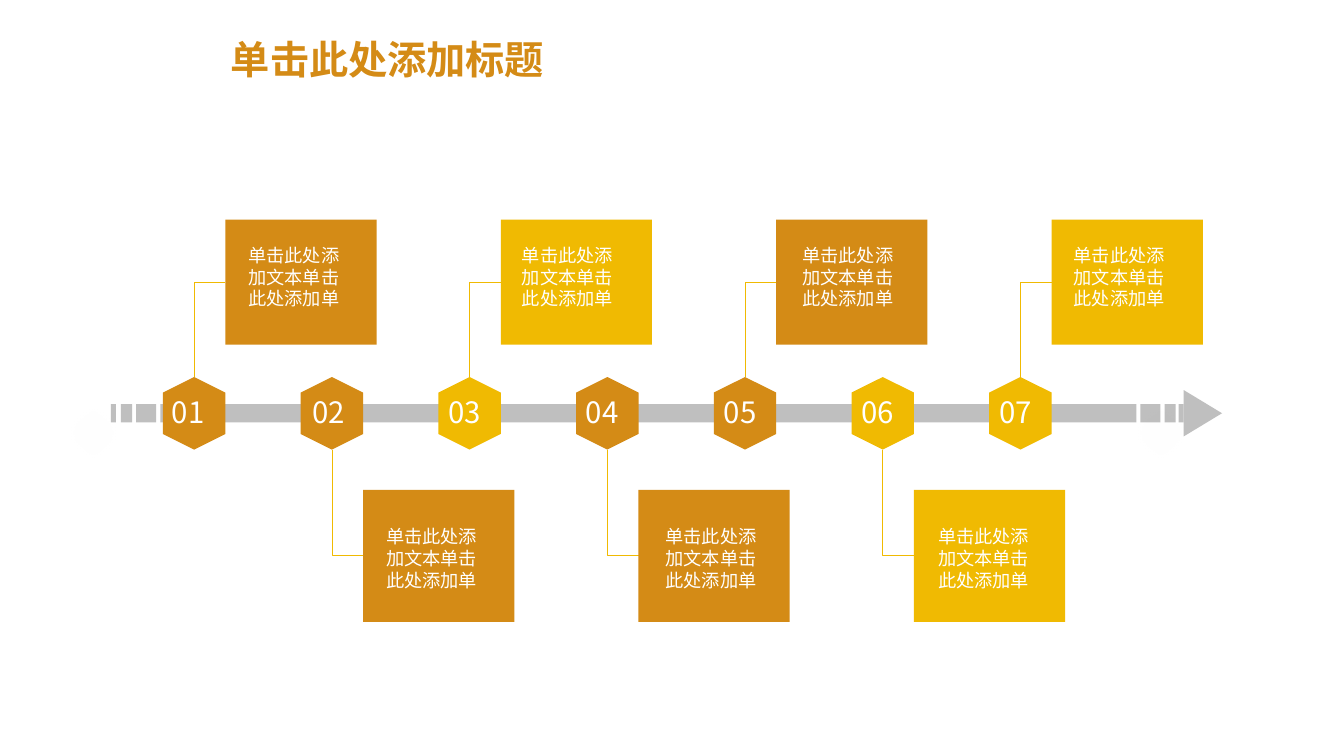
import pptx
import pptx.dml.color
import pptx.enum.shapes
import pptx.enum.text
import pptx.oxml.ns
import pptx.util
from lxml import etree

Inches = pptx.util.Inches
Pt = pptx.util.Pt
qn = pptx.oxml.ns.qn
PRESET = pptx.enum.shapes.MSO_SHAPE

COLORS = {"orange": "D48B16", "yellow": "F0BA02", "track": "BFBFBF",
          "white": "FFFFFF", "shadow": "000000"}
FONT = "Noto Sans CJK SC"
CARD_TEXT = "单击此处添加文本单击此处添加单"
FIRST_CENTER, STEP = 1.925, 1.366
HEX_LONG, HEX_SHORT = 0.72, 0.62
AXIS = 4.1
CARD_WIDTH = 1.5
ARM = 0.31
CARD_ROWS = {
    "above": {"top": 2.18, "height": 1.24, "text_top": 2.35, "elbow": 2.8},
    "below": {"top": 4.86, "height": 1.31, "text_top": 5.14, "elbow": 5.51},
}
STEPS = [
    ("orange", 0.32, 0.10),
    ("orange", 0.29, 0.10),
    ("yellow", 0.31, 0.08),
    ("orange", 0.31, 0.14),
    ("orange", 0.31, 0.13),
    ("yellow", 0.31, 0.11),
    ("yellow", 0.31, 0.09),
]
TRACK_PARTS = [
    (1.1, 0.05, True), (1.2, 0.11, False), (1.35, 0.2, False), (1.59, 9.68, False),
    (11.31, 0.2, False), (11.55, 0.11, False), (11.69, 0.05, True),
]


def rgb(name):
    return pptx.dml.color.RGBColor.from_string(COLORS[name])


def add_block(page, preset, left, top, width, height, color):
    block = page.shapes.add_shape(
        preset, Inches(left), Inches(top), Inches(width), Inches(height))
    block.shadow.inherit = False
    block.fill.solid()
    block.fill.fore_color.rgb = rgb(color)
    block.line.fill.background()
    return block


def style_paragraph(para, size, color, font):
    para.font.size = Pt(size)
    para.font.color.rgb = rgb(color)
    para.font.name = font
    defaults = para._p.pPr.find(qn("a:defRPr"))
    etree.SubElement(defaults, qn("a:ea")).set("typeface", font)


def add_label(page, left, top, width, height, text, size, inset_x, inset_y):
    box = page.shapes.add_textbox(
        Inches(left), Inches(top), Inches(width), Inches(height))
    frame = box.text_frame
    frame.word_wrap = True
    frame.margin_left = frame.margin_right = Inches(inset_x)
    frame.margin_top = frame.margin_bottom = Inches(inset_y)
    frame.text = text
    style_paragraph(frame.paragraphs[0], size, "white", FONT)


def add_soft_shadow(block):
    effects = block._element.spPr.find(qn("a:effectLst"))
    shadow = etree.SubElement(effects, qn("a:outerShdw"))
    shadow.set("blurRad", str(Pt(34)))
    shadow.set("dist", str(Pt(20)))
    shadow.set("dir", str(136 * 60000))
    tint = etree.SubElement(shadow, qn("a:srgbClr"))
    tint.set("val", COLORS["shadow"])
    etree.SubElement(tint, qn("a:alpha")).set("val", "10000")


def add_elbow(page, left, start, end):
    length = abs(end - start)
    middle_x, middle_y = left + ARM / 2, (start + end) / 2
    rising = end < start
    side = 1 if rising else -1
    elbow = page.shapes.add_connector(
        pptx.enum.shapes.MSO_CONNECTOR.ELBOW,
        Inches(middle_x + length / 2), Inches(middle_y + side * ARM / 2),
        Inches(middle_x - length / 2), Inches(middle_y - side * ARM / 2))
    properties = elbow._element.spPr
    properties.find(qn("a:xfrm")).set("rot", str((90 if rising else 270) * 60000))
    properties.find(qn("a:prstGeom")).set("prst", "bentConnector2")
    elbow.line.color.rgb = rgb("yellow")
    elbow.line.width = Pt(0.5)
    etree.SubElement(properties, qn("a:effectLst"))


def add_title(page, left, top, width, height):
    title = page.shapes.title
    title.left, title.top = Inches(left), Inches(top)
    title.width, title.height = Inches(width), Inches(height)
    frame = title.text_frame
    frame.text = "单击此处添加标题"
    frame.vertical_anchor = pptx.enum.text.MSO_ANCHOR.MIDDLE
    para = frame.paragraphs[0]
    para.alignment = pptx.enum.text.PP_ALIGN.LEFT
    para.line_spacing = 0.9
    para.font.bold = True
    style_paragraph(para, 28, "orange", "Montserrat")


def add_track(page, top, height):
    for left, width, shaded in TRACK_PARTS:
        part = add_block(page, PRESET.RECTANGLE, left, top, width, height, "track")
        if shaded:
            add_soft_shadow(part)
    head = add_block(page, PRESET.ISOSCELES_TRIANGLE, 11.7, 3.91, 0.46, 0.38, "track")
    head.rotation = 90


def add_card(page, center, row, color, text_offset):
    left = center + ARM
    side = -1 if row["elbow"] < AXIS else 1
    add_elbow(page, center, AXIS + side * HEX_LONG / 2, row["elbow"])
    add_block(page, PRESET.RECTANGLE, left, row["top"], CARD_WIDTH, row["height"], color)
    add_label(page, left + text_offset, row["text_top"], 1.33, 0.81,
              CARD_TEXT, 13, 0.13, 0.07)


def add_marker(page, center, number, color, number_offset):
    marker = add_block(page, PRESET.HEXAGON, center - HEX_LONG / 2,
                       AXIS - HEX_SHORT / 2, HEX_LONG, HEX_SHORT, color)
    marker.rotation = 90
    add_label(page, center - number_offset, 3.86, 0.62, 0.45,
              f"{number:02d}", 21, 0.1, 0.05)


def add_timeline(page):
    add_track(page, 4.01, 0.18)
    for index, (color, number_offset, text_offset) in enumerate(STEPS):
        center = FIRST_CENTER + index * STEP
        row = CARD_ROWS["below" if index % 2 else "above"]
        add_card(page, center, row, color, text_offset)
        add_marker(page, center, index + 1, color, number_offset)


def main():
    deck = pptx.Presentation()
    deck.slide_width, deck.slide_height = Inches(13.33), Inches(7.5)
    page = deck.slides.add_slide(deck.slide_layouts[5])
    add_timeline(page)
    add_title(page, 2.19, 0.34, 11.5, 0.54)
    deck.save("out.pptx")


if __name__ == "__main__":
    main()
